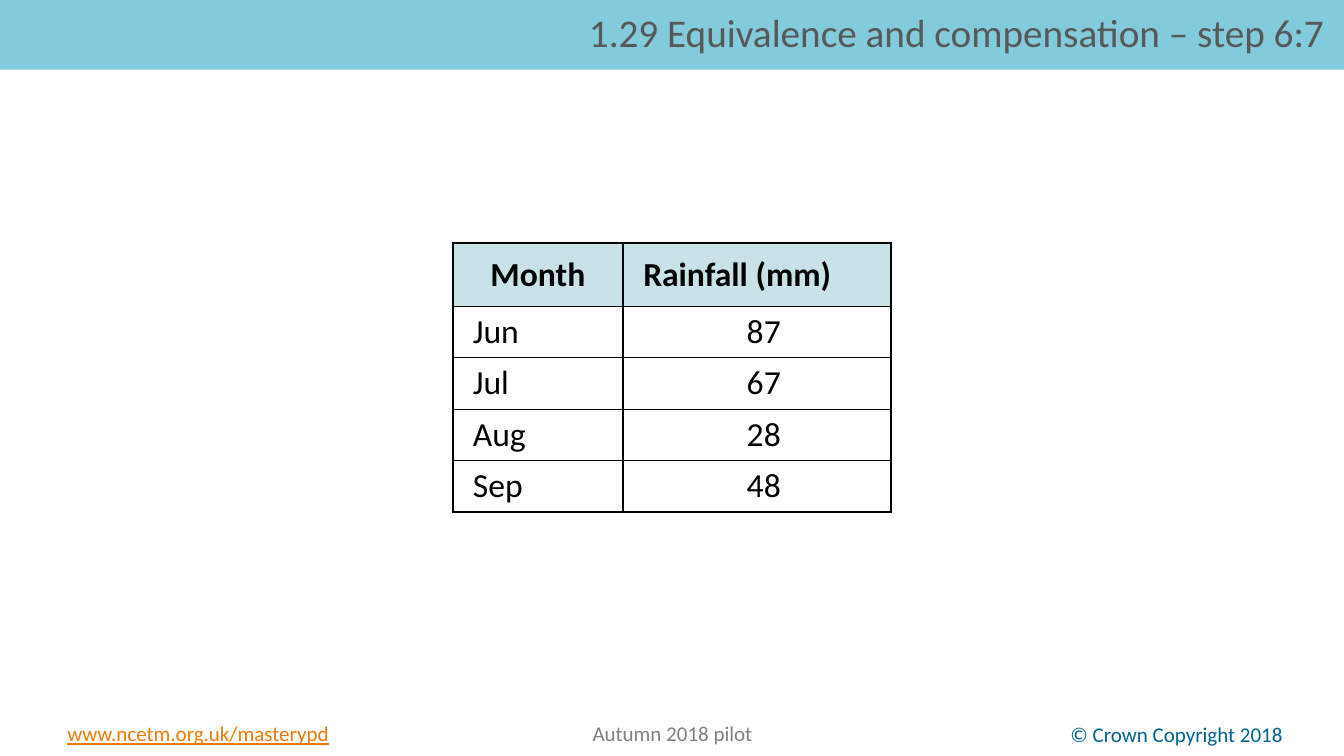
from lxml import etree
from pptx import Presentation
from pptx.dml.color import RGBColor
from pptx.enum import shapes, text
from pptx.oxml import ns
from pptx.util import Inches, Pt

TITLE = "1.29 Equivalence and compensation – step 6:7"
RAINFALL = [
    ("Month", "Rainfall (mm)"),
    ("Jun", "87"),
    ("Jul", "67"),
    ("Aug", "28"),
    ("Sep", "48"),
]
COLUMN_WIDTHS = (1.69, 2.66)
HEADER_HEIGHT, ROW_HEIGHT = 0.63, 0.51

BLACK = RGBColor(0x00, 0x00, 0x00)
BAND = RGBColor(0x82, 0xCB, 0xDD)
HEADER_FILL = RGBColor(0xC8, 0xE2, 0xE8)
TITLE_GREY = RGBColor(0x58, 0x58, 0x58)
FOOTER_GREY = RGBColor(0x80, 0x80, 0x80)
LINK_ORANGE = RGBColor(0xEE, 0x7B, 0x08)
COPYRIGHT_BLUE = RGBColor(0x00, 0x62, 0x8C)

LEFT, CENTER, RIGHT = text.PP_ALIGN.LEFT, text.PP_ALIGN.CENTER, text.PP_ALIGN.RIGHT
FOOTERS = [  # text, left, top, alignment, colour, underlined
    ("www.ncetm.org.uk/masterypd", 0.57, 7.1, LEFT, LINK_ORANGE, True),
    ("Autumn 2018 pilot", 4.62, 7.1, CENTER, FOOTER_GREY, False),
    ("© Crown Copyright 2018", 8.72, 7.11, RIGHT, COPYRIGHT_BLUE, False),
]


def write(tf, words, size, color, align, bold=False, underline=False):
    p = tf.paragraphs[0]
    p.text = words
    p.alignment = align
    p.font.name = "Calibri"
    p.font.size = Pt(size)
    p.font.color.rgb = color
    p.font.bold = bold
    p.font.underline = underline
    return p


def add_title_band(s):
    band = s.shapes.add_shape(shapes.MSO_SHAPE.RECTANGLE, 0, 0, Inches(13.33), Inches(0.69))
    band.shadow.inherit = False
    band.fill.solid()
    band.fill.fore_color.rgb = BAND
    band.line.fill.background()
    tf = band.text_frame
    tf.word_wrap = True
    tf.vertical_anchor = text.MSO_ANCHOR.MIDDLE
    tf.margin_left = tf.margin_right = Inches(0.2)
    write(tf, TITLE, 28, TITLE_GREY, RIGHT).line_spacing = 0.9


def set_borders(cell, widths):
    """Draw the cell's sides; widths maps L, R, T and B to points."""
    tcPr = cell._tc.get_or_add_tcPr()
    for side, width in widths.items():
        ln = etree.SubElement(tcPr, ns.qn(f"a:ln{side}"), w=str(Pt(width)))
        fill = etree.SubElement(ln, ns.qn("a:solidFill"))
        etree.SubElement(fill, ns.qn("a:srgbClr"), val=str(BLACK))


def add_rainfall_table(s):
    last_row, last_col = len(RAINFALL) - 1, len(COLUMN_WIDTHS) - 1
    height = HEADER_HEIGHT + last_row * ROW_HEIGHT
    frame = s.shapes.add_table(len(RAINFALL), len(COLUMN_WIDTHS), Inches(4.49), Inches(2.41),
                               Inches(sum(COLUMN_WIDTHS)), Inches(height))
    table = frame.table
    table.first_row = table.horz_banding = False
    for column, width in zip(table.columns, COLUMN_WIDTHS):
        column.width = Inches(width)
    for r, row in enumerate(RAINFALL):
        header = r == 0
        table.rows[r].height = Inches(HEADER_HEIGHT if header else ROW_HEIGHT)
        for c, words in enumerate(row):
            cell = table.cell(r, c)
            edges = {"L": c == 0, "R": c == last_col, "T": header, "B": r == last_row}
            set_borders(cell, {side: 1.5 if outer else 1 for side, outer in edges.items()})
            if header:
                cell.fill.solid()
                cell.fill.fore_color.rgb = HEADER_FILL
            else:
                cell.fill.background()
            cell.vertical_anchor = text.MSO_ANCHOR.MIDDLE
            cell.margin_left = Inches(0.07 if header and c == 0 else 0.2)
            cell.margin_right = Inches(0.07)
            cell.margin_top = cell.margin_bottom = 0
            align = CENTER if header == (c == 0) else LEFT
            write(cell.text_frame, words, 24, BLACK, align, bold=header)


def add_footers(s):
    for words, left, top, align, color, underline in FOOTERS:
        box = s.shapes.add_textbox(Inches(left), Inches(top), Inches(4.1), Inches(0.35))
        box.text_frame.word_wrap = True
        write(box.text_frame, words, 15, color, align, underline=underline)


def main():
    prs = Presentation()
    prs.slide_width, prs.slide_height = Inches(13.33), Inches(7.5)
    s = prs.slides.add_slide(prs.slide_layouts[6])
    add_footers(s)
    add_title_band(s)
    add_rainfall_table(s)
    prs.save("out.pptx")


if __name__ == "__main__":
    main()
